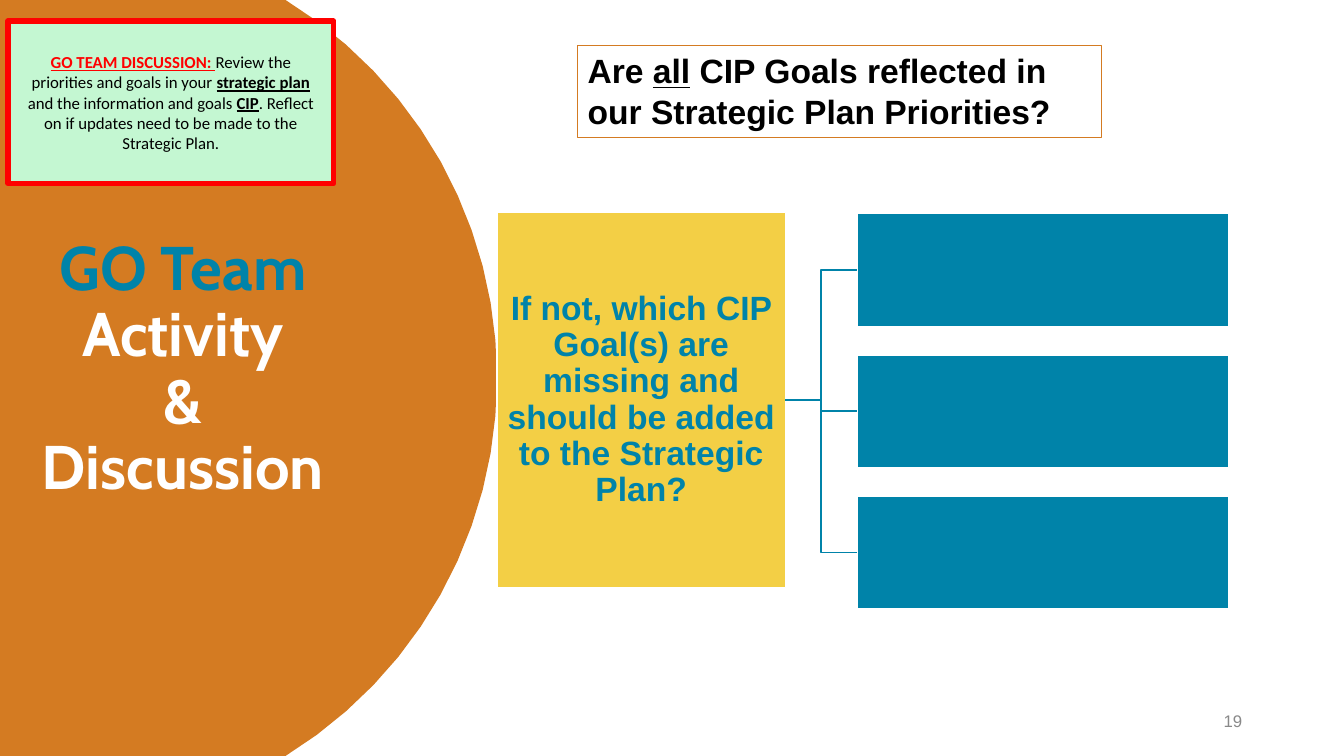
"""Build the GO Team activity and discussion slide."""
from math import asin, cos, sin

from lxml import etree
from pptx import Presentation
from pptx.dml.color import RGBColor
from pptx.enum.shapes import MSO_CONNECTOR, MSO_SHAPE
from pptx.enum.text import MSO_ANCHOR, MSO_AUTO_SIZE, PP_ALIGN
from pptx.oxml.ns import qn
from pptx.util import Inches, Pt

RECT, ELBOW = MSO_SHAPE.RECTANGLE, MSO_CONNECTOR.ELBOW
TOP, MIDDLE = MSO_ANCHOR.TOP, MSO_ANCHOR.MIDDLE
LEFT, CENTER, RIGHT = PP_ALIGN.LEFT, PP_ALIGN.CENTER, PP_ALIGN.RIGHT
NO_FIT = MSO_AUTO_SIZE.NONE

THEME = {
    "orange": "D47B22", "teal": "0083A9", "yellow": "F3CF45",
    "mint": "C4F7D2", "red": "FF0000", "black": "000000",
    "white": "FFFFFF", "gray": "898989",
    "title": 44, "head": 24, "small": 12,
}

TITLE = [[("GO Team\n", "teal", {}), ("Activity\n&\nDiscussion", "white", {})]]
PLAIN, STRONG = {}, {"bold": True, "underline": True}
NOTE = [[
    ("GO TEAM DISCUSSION: ", "red", STRONG),
    ("Review the priorities and goals in your ", "black", PLAIN),
    ("strategic plan ", "black", STRONG),
    ("and the information and goals ", "black", PLAIN),
    ("CIP", "black", STRONG),
    (". Reflect on if updates need to be made to the Strategic Plan.", "black", PLAIN),
]]
HEAD = [
    [("Are ", "black", {}), ("all", "black", {"underline": True}),
     (" CIP Goals reflected in", "black", {})],
    [("our Strategic Plan Priorities?", "black", {})],
]
ASK = [[("If not, which CIP Goal(s) are missing and should be added "
         "to the Strategic Plan?", "teal", {})]]
PAGE = [[("19", "gray", {})]]

WIDE, HIGH = 13.33, 7.5
DISC = {"mid": 0.53, "radius": 4.4, "steps": 24}
BOXES = {"count": 3, "left": 8.5, "top": 2.12, "width": 3.69, "height": 1.12,
         "step": 1.4}


def color(name):
    """Return a theme colour."""
    return RGBColor.from_string(THEME[name])


def apply(item, values):
    """Set each named attribute on an item."""
    for name, value in values.items():
        setattr(item, name, value)


def paint(shape, fill=None, line=None, width=1):
    """Set the fill and outline of a shape."""
    shape.shadow.inherit = False
    if fill:
        shape.fill.solid()
        shape.fill.fore_color.rgb = color(fill)
    else:
        shape.fill.background()
    if line:
        shape.line.color.rgb = color(line)
        shape.line.width = Pt(width)
    else:
        shape.line.fill.background()
    return shape


def write(shape, paras, font, frame, para):
    """Fill a shape with styled paragraphs."""
    text = shape.text_frame
    apply(text, {"word_wrap": True, "auto_size": NO_FIT, **frame})
    for index, runs in enumerate(paras):
        line = text.add_paragraph() if index else text.paragraphs[0]
        apply(line, para)
        for words, tint, style in runs:
            for part, piece in enumerate(words.split("\n")):
                if part:
                    line.add_line_break()
                if piece:
                    run = line.add_run()
                    run.text = piece
                    apply(run.font, {**font, **style})
                    run.font.color.rgb = color(tint)


def box(slide, place, **style):
    """Add a painted rectangle."""
    return paint(slide.shapes.add_shape(RECT, *map(Inches, place)), **style)


def disc(slide):
    """Add the round panel cut off by the slide's left edge."""
    mid, radius, steps = DISC["mid"], DISC["radius"], DISC["steps"]
    half = asin(HIGH / 2 / radius)
    turns = [half * (2 * n / steps - 1) for n in range(steps + 1)]
    arc = [(mid + radius * cos(t), HIGH / 2 + radius * sin(t)) for t in turns]
    pen = slide.shapes.build_freeform(0, 0, scale=Inches(1) / 1000)
    points = [(round(x * 1000), round(y * 1000)) for x, y in arc + [(0, HIGH)]]
    pen.add_line_segments(points, close=True)
    paint(pen.convert_to_shape(), fill="orange")


def join(slide, start, end):
    """Link the right side of one box to the left side of another."""
    link = slide.shapes.add_connector(ELBOW, 0, 0, 0, 0)
    link.begin_connect(start, 3)
    link.end_connect(end, 1)
    link.line.color.rgb = color("teal")
    link.line.width = Pt(1.25)
    etree.SubElement(link.element.spPr, qn("a:effectLst"))


def main():
    """Create and save the slide."""
    deck = Presentation()
    deck.slide_width, deck.slide_height = Inches(WIDE), Inches(HIGH)
    slide = deck.slides.add_slide(deck.slide_layouts[5])
    title = slide.shapes.title
    disc(slide)
    apply(title, dict(zip(("left", "top", "width", "height"),
                          map(Inches, (0.2, 2.11, 3.23, 3.12)))))
    slide.shapes.element.append(title.element)
    note = box(slide, (0.08, 0.21, 3.23, 1.61), fill="mint", line="red", width=4)
    head = box(slide, (5.73, 0.45, 5.2, 0.91), line="orange", width=0.75)
    ask = box(slide, (4.93, 2.11, 2.86, 3.72), fill="yellow", line="white")
    page = slide.shapes.add_textbox(*map(Inches, (9.42, 6.95, 3, 0.4)))

    for row in range(BOXES["count"]):
        top = BOXES["top"] + row * BOXES["step"]
        place = (BOXES["left"], top, BOXES["width"], BOXES["height"])
        join(slide, ask, box(slide, place, fill="teal", line="white"))

    big = {"name": "Cabin", "size": Pt(THEME["title"]), "bold": True}
    bold = {"name": "Arial", "size": Pt(THEME["head"]), "bold": True}
    small = {"name": "Calibri", "size": Pt(THEME["small"]), "bold": False}
    mid = {"vertical_anchor": MIDDLE}
    sides = ("margin_left", "margin_top", "margin_right", "margin_bottom")
    tight = {**mid, **dict.fromkeys(sides, Inches(0.02))}
    inset = {**mid, **dict.fromkeys(sides[::2], Inches(0.17))}
    dense = {"alignment": CENTER, "line_spacing": 0.9}
    write(title, TITLE, big, mid, dense)
    write(note, NOTE, small, inset, {"alignment": CENTER})
    write(head, HEAD, bold, {"vertical_anchor": TOP}, {"alignment": LEFT})
    write(ask, ASK, bold, tight, dense)
    write(page, PAGE, {**small, "name": "Arial"}, mid,
          {"alignment": RIGHT, "space_after": Pt(6)})
    deck.save("out.pptx")


if __name__ == "__main__":
    main()
